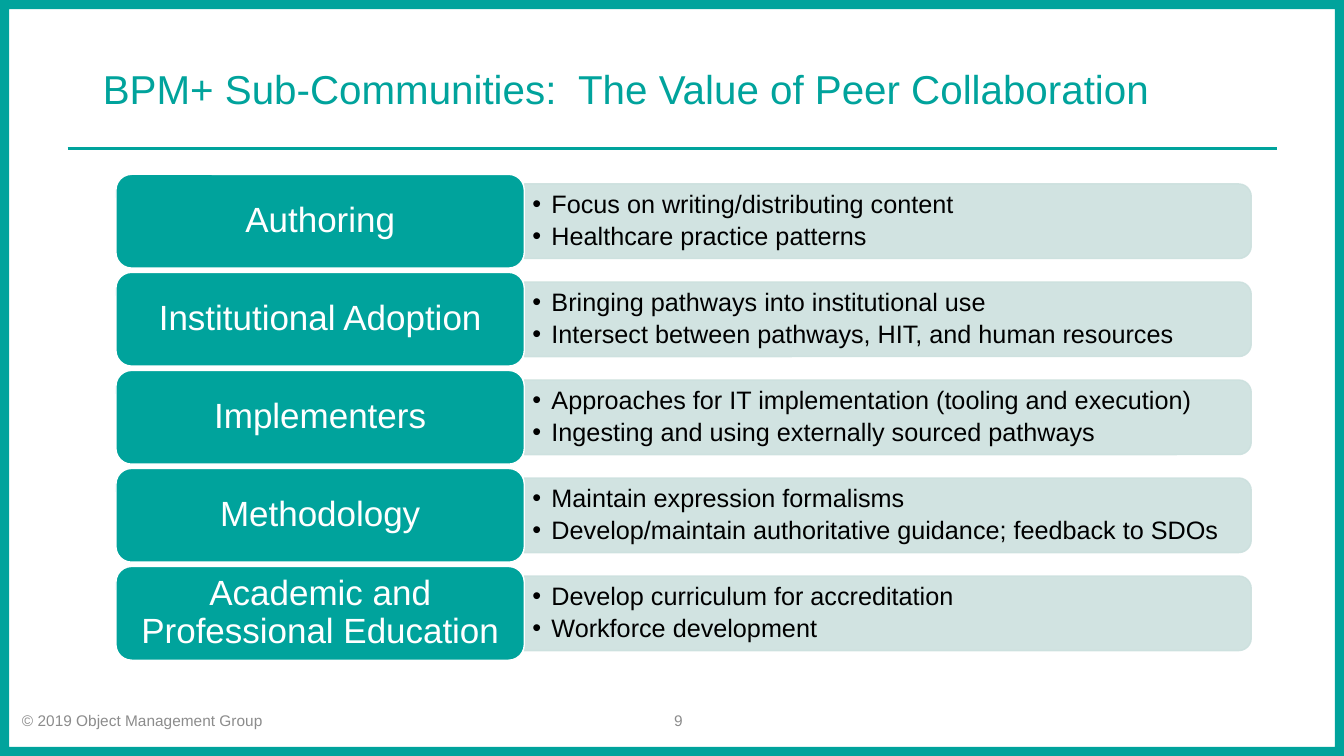
from dataclasses import dataclass
from typing import Any

from lxml.etree import SubElement
from pptx import Presentation
from pptx.dml.color import RGBColor
from pptx.enum.shapes import MSO_CONNECTOR as Connector, MSO_SHAPE as Shape
from pptx.enum.text import MSO_ANCHOR as Anchor, MSO_AUTO_SIZE as AutoSize, PP_ALIGN as Align
from pptx.oxml.ns import qn
from pptx.util import Inches, Pt

COLUMNS, ROWS = 133.3, 75
CELL = Inches(0.1)
TEAL, MIST, WHITE, BLACK, GREY = "00A39C", "CCE0DE", "FFFFFF", "000000", "8C8C8C"


@dataclass(frozen=True)
class Area:
    """A rectangle in grid columns and rows."""
    left: float
    top: float
    width: float
    height: float

    def emu(self) -> tuple[int, ...]:
        """Return the rectangle as slide lengths."""
        return tuple(cells(n) for n in (self.left, self.top, self.width, self.height))


@dataclass(frozen=True)
class Style:
    """The look of a block of text."""
    size: float
    color: str
    align: Align = Align.LEFT
    line_spacing: float = 1.0
    space_after: float = 0
    inset: tuple[float, float] = (1, 0.5)
    bullet_indent: float = 0


@dataclass(frozen=True)
class Community:
    """A sub-community and its topics."""
    name: str
    topics: tuple[str, ...]


TITLE = Style(28.8, TEAL, line_spacing=0.9)
LABEL = Style(25, WHITE, Align.CENTER, 0.9)
TOPIC = Style(18, BLACK, line_spacing=0.9, space_after=3.4, inset=(0.7, 0.4), bullet_indent=1.9)
FOOTER = Style(11, GREY)
NUMBER = Style(11, GREY, Align.RIGHT)

FIRST_ROW, LAST_ROW = 17.3, 56.2
LABEL_LEFT, LABEL_WIDTH, LABEL_HEIGHT = 11.5, 40.5, 9.3
PANEL_WIDTH, PANEL_HEIGHT = 72.1, 7.4
TOPIC_WIDTH, TOPIC_HEIGHT = 71.7, 6.7

COMMUNITIES = (
    Community("Authoring", (
        "Focus on writing/distributing content", "Healthcare practice patterns")),
    Community("Institutional Adoption", (
        "Bringing pathways into institutional use",
        "Intersect between pathways, HIT, and human resources")),
    Community("Implementers", (
        "Approaches for IT implementation (tooling and execution)",
        "Ingesting and using externally sourced pathways")),
    Community("Methodology", (
        "Maintain expression formalisms",
        "Develop/maintain authoritative guidance; feedback to SDOs")),
    Community("Academic and Professional Education", (
        "Develop curriculum for accreditation", "Workforce development")),
)


def cells(count: float) -> int:
    """Convert grid cells to a length."""
    return round(count * CELL)


def paint(target: Any, color: str) -> None:
    """Give a fill or font a solid colour."""
    if hasattr(target, "solid"):
        target.solid()
        target = target.fore_color
    else:
        target = target.color
    target.rgb = RGBColor.from_string(color)


def assign(target: Any, values: dict[str, Any]) -> None:
    """Set each named attribute of the target."""
    for name, value in values.items():
        setattr(target, name, value)


def write(box: Any, lines: tuple[str, ...], style: Style) -> None:
    """Fill a shape with styled paragraphs."""
    frame = box.text_frame
    across, down = map(cells, style.inset)
    assign(frame, {"word_wrap": True, "auto_size": AutoSize.NONE, "vertical_anchor": Anchor.MIDDLE,
                   "margin_left": across, "margin_right": across,
                   "margin_top": down, "margin_bottom": down})
    for index, line in enumerate(lines):
        para = frame.add_paragraph() if index else frame.paragraphs[0]
        if style.bullet_indent:
            add_bullet(para, style.bullet_indent)
        assign(para, {"alignment": style.align, "line_spacing": style.line_spacing,
                      "space_before": Pt(0), "space_after": Pt(style.space_after)})
        span = para.add_run()
        span.text = line
        assign(span.font, {"name": "Arial", "size": Pt(style.size)})
        paint(span.font, style.color)


def add_bullet(para: Any, indent: float) -> None:
    """Give a paragraph a hanging round bullet."""
    properties = para._p.get_or_add_pPr()
    properties.set("marL", str(cells(indent)))
    properties.set("indent", str(-cells(indent)))
    SubElement(properties, qn("a:buFont")).set("typeface", "Arial")
    SubElement(properties, qn("a:buChar")).set("char", "•")


def add_text(page: Any, area: Area, lines: tuple[str, ...], style: Style) -> None:
    """Place a text box."""
    write(page.shapes.add_textbox(*area.emu()), lines, style)


def add_block(page: Any, kind: Shape, area: Area, fill: str, line: str | None) -> Any:
    """Place a filled preset shape."""
    block = page.shapes.add_shape(kind, *area.emu())
    block.shadow.inherit = False
    paint(block.fill, fill)
    if line:
        paint(block.line.fill, line)
        block.line.width = Pt(1)
    else:
        block.line.fill.background()
    return block


def add_rule(page: Any) -> None:
    """Draw the line under the title."""
    left, right, level = map(cells, (6.7, 126.7, 14.7))
    rule = page.shapes.add_connector(Connector.STRAIGHT, left, level, right, level)
    paint(rule.line.fill, TEAL)
    rule.line.width = Pt(2)
    SubElement(rule._element.spPr, qn("a:effectLst"))


def add_community(page: Any, community: Community, top: float) -> None:
    """Draw one row: topic panel, topics and label."""
    middle = top + LABEL_HEIGHT / 2
    edge = LABEL_LEFT + LABEL_WIDTH
    panel_area = Area(edge + (PANEL_WIDTH - PANEL_HEIGHT) / 2, middle - PANEL_WIDTH / 2,
                      PANEL_HEIGHT, PANEL_WIDTH)
    panel = add_block(page, Shape.ROUND_2_SAME_RECTANGLE, panel_area, MIST, MIST)
    panel.rotation = 90
    for tint in panel._element.spPr.iter(qn("a:srgbClr")):
        SubElement(tint, qn("a:alpha")).set("val", "90000")
    topic_area = Area(edge + 0.1, middle - TOPIC_HEIGHT / 2, TOPIC_WIDTH, TOPIC_HEIGHT)
    add_text(page, topic_area, community.topics, TOPIC)
    label_area = Area(LABEL_LEFT, top, LABEL_WIDTH, LABEL_HEIGHT)
    label = add_block(page, Shape.ROUNDED_RECTANGLE, label_area, TEAL, WHITE)
    write(label, (community.name,), LABEL)


def main() -> None:
    """Build and save the deck."""
    deck = Presentation()
    assign(deck, {"slide_width": cells(COLUMNS), "slide_height": cells(ROWS)})
    page = deck.slides.add_slide(deck.slide_layouts[5])
    paint(page.background.fill, WHITE)
    border = add_block(page, Shape.FRAME, Area(0, 0, COLUMNS, ROWS), TEAL, None)
    border.adjustments[0] = 0.012
    add_rule(page)
    title = page.shapes.title
    assign(title, dict(zip(("left", "top", "width", "height"), Area(9.2, 4.8, 115, 8.5).emu())))
    write(title, ("BPM+ Sub-Communities:  The Value of Peer Collaboration",), TITLE)
    add_text(page, Area(1.2, 69.5, 43.6, 4), ("© 2019 Object Management Group",), FOOTER)
    add_text(page, Area(64.6, 69.5, 4.1, 4), ("9",), NUMBER)
    pitch = (LAST_ROW - FIRST_ROW) / (len(COMMUNITIES) - 1)
    for index, community in enumerate(COMMUNITIES):
        add_community(page, community, FIRST_ROW + index * pitch)
    deck.save("out.pptx")


if __name__ == "__main__":
    main()
